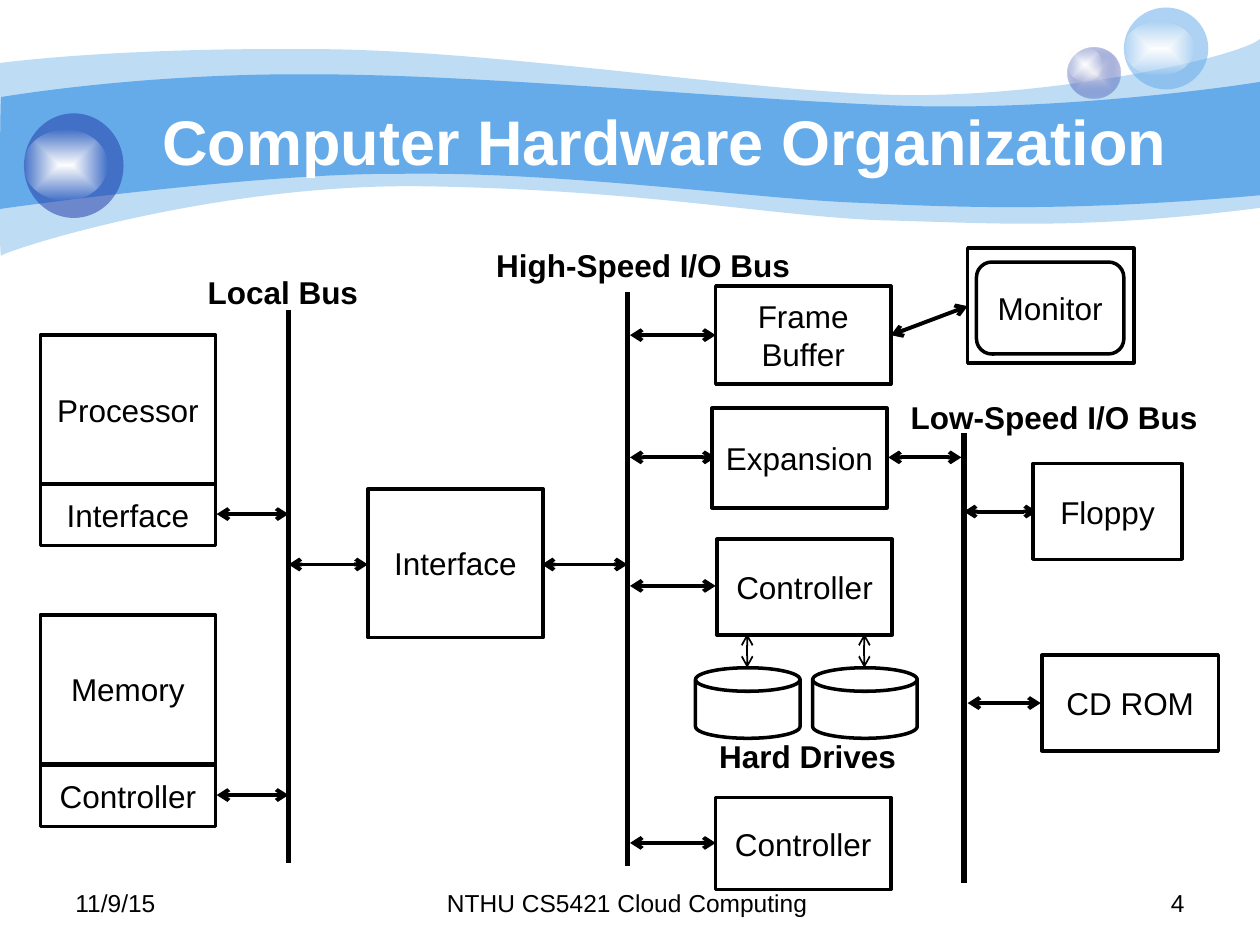
import dataclasses
from typing import Optional

import pptx
import pptx.dml.color
import pptx.enum.shapes
import pptx.enum.text
import pptx.oxml
import pptx.oxml.ns
import pptx.util
from pptx.util import Inches

SHAPE = pptx.enum.shapes.MSO_SHAPE
ALIGN = pptx.enum.text.PP_ALIGN
ANCHOR = pptx.enum.text.MSO_ANCHOR
qn = pptx.oxml.ns.qn
NS = pptx.oxml.ns.nsdecls("a")
BLACK, WHITE, SKY, NAVY = "000000", "FFFFFF", "65AAE9", "233DA9"
LOCAL_BUS_X, HIGH_BUS_X, LOW_BUS_X = 2.29, 4.98, 7.65
UNIT_W, UNIT_H = 1.39, 1.18


@dataclasses.dataclass
class Box:
    left: float
    top: float
    width: float
    height: float
    text: str = ""
    preset: int = SHAPE.RECTANGLE


@dataclasses.dataclass
class Link:
    x1: float
    y1: float
    x2: float
    y2: float
    weight: float = 2.25
    arrows: bool = True


@dataclasses.dataclass
class Label:
    left: float
    top: float
    width: float
    height: float
    text: str
    size: int = 18
    bold: bool = True
    color: str = BLACK
    align: int = ALIGN.LEFT
    anchor: int = ANCHOR.TOP


@dataclasses.dataclass
class Wave:
    """A start point followed by cubic curves; a two-number step is a straight line."""
    start: tuple
    steps: list
    opacity: int = 100


@dataclasses.dataclass
class Bubble:
    left: float
    top: float
    width: float
    height: float
    color: str
    opacity: int = 100
    center: Optional[str] = None


WAVES = [
    Wave((0, 0.5), [
        (0.24, 0.47, 1.07, 0.38, 2.47, 0.39), (3.86, 0.39, 5.75, 0.7, 6.99, 0.75),
        (8.22, 0.8, 9.8, 0.47, 10, 0.31), (10, 1.65),
        (8.58, 1.83, 7.87, 1.77, 7.05, 1.75), (6.22, 1.73, 5.15, 1.51, 3.43, 1.48),
        (1.72, 1.44, 0.04, 1.99, 0.01, 2.03), (-0.01, 2.08, 0, 0.75, 0, 0.5)], 41),
    Wave((0.01, 0.77), [
        (0.02, 0.77, 1.1, 0.58, 2.48, 0.59), (3.86, 0.59, 5.95, 0.8, 7.18, 0.84),
        (8.41, 0.88, 9.76, 0.69, 10, 0.65), (10, 1.55),
        (8.53, 1.68, 7.65, 1.65, 6.82, 1.61), (5.99, 1.58, 4.47, 1.36, 3.17, 1.38),
        (2.03, 1.37, -0.02, 1.66, -0.01, 1.66), (0, 1.66, 0, 0.77, 0.01, 0.77)]),
]
BUBBLES = [
    Bubble(8.47, 0.38, 0.42, 0.4, NAVY, 31, center="E1E2ED"),
    Bubble(8.47, 0.38, 0.28, 0.27, WHITE, 0, center=WHITE),
    Bubble(8.92, 0.06, 0.67, 0.65, SKY, 53),
    Bubble(8.92, 0.17, 0.56, 0.43, WHITE, 0, center=WHITE),
    Bubble(0.19, 0.9, 0.79, 0.83, NAVY, 53),
    Bubble(0.19, 1.03, 0.66, 0.56, WHITE, 0, center=WHITE),
]
BOXES = [
    Box(0.32, 2.66, UNIT_W, UNIT_H, "Processor"),
    Box(0.32, 3.84, UNIT_W, 0.49, "Interface"),
    Box(0.32, 4.88, UNIT_W, UNIT_H, "Memory"),
    Box(0.32, 6.07, UNIT_W, 0.49, "Controller"),
    Box(2.92, 3.88, UNIT_W, UNIT_H, "Interface"),
    Box(5.68, 6.33, UNIT_W, 0.73, "Controller"),
    Box(5.69, 4.28, UNIT_W, 0.76, "Controller"),
    Box(5.65, 3.24, UNIT_W, 0.79, "Expansion"),
    Box(5.68, 2.27, UNIT_W, 0.78, "Frame Buffer"),
    Box(5.52, 5.3, 0.83, 0.56, preset=SHAPE.FLOWCHART_MAGNETIC_DISK),
    Box(6.45, 5.3, 0.83, 0.56, preset=SHAPE.FLOWCHART_MAGNETIC_DISK),
    Box(7.68, 1.97, 1.32, 0.91),
    Box(7.75, 2.08, 1.17, 0.73, "Monitor", SHAPE.ROUNDED_RECTANGLE),
    Box(8.2, 3.68, 1.18, 0.76, "Floppy"),
    Box(8.27, 5.2, 1.4, 0.76, "CD ROM"),
]
BUSES = [Link(x, top, x, bottom, 3, False) for x, top, bottom in
         [(LOCAL_BUS_X, 2.46, 6.85), (HIGH_BUS_X, 2.32, 6.87), (LOW_BUS_X, 3.44, 7.01)]]
LINKS = [
    *[Link(1.72, y, LOCAL_BUS_X, y) for y in (4.08, 6.31)],
    Link(LOCAL_BUS_X, 4.48, 2.92, 4.48),
    Link(4.3, 4.48, HIGH_BUS_X, 4.48),
    *[Link(5, y, 5.68, y) for y in (2.66, 3.63, 4.65, 6.69)],
    *[Link(x, 5.03, x, 5.3, 1) for x in (5.93, 6.86)],
    Link(7.05, 3.63, 7.63, 3.63),
    Link(7.07, 2.66, 7.68, 2.43),
    Link(LOW_BUS_X, 4.06, 8.23, 4.06),
    Link(7.68, 5.58, 8.26, 5.58),
]
LABELS = [
    Label(1.06, 0.68, 8.43, 0.87, "Computer Hardware Organization", 36, True, WHITE,
          ALIGN.CENTER, ANCHOR.MIDDLE),
    Label(0.5, 7, 2.33, 0.35, "11/9/15", 14, False),
    Label(7.17, 7, 2.33, 0.35, "4", 14, False, align=ALIGN.RIGHT),
    Label(3.42, 7, 3.17, 0.35, "NTHU CS5421 Cloud Computing ", 14, False, align=ALIGN.CENTER),
    Label(5.61, 5.8, 1.91, 0.4, "Hard Drives"),
    Label(1.55, 2.12, 1.67, 0.36, "Local Bus"),
    Label(3.84, 1.9, 2.54, 0.36, "High-Speed I/O Bus"),
    Label(7.13, 3.11, 2.54, 0.4, "Low-Speed I/O Bus"),
]


def rgb(value: str) -> pptx.dml.color.RGBColor:
    return pptx.dml.color.RGBColor.from_string(value)


def fill_shape(shape, color: str, opacity: int = 100, center: Optional[str] = None) -> None:
    """Fill plainly, or from an opaque center colour outwards."""
    shape.shadow.inherit = False
    shape.fill.solid()
    shape.fill.fore_color.rgb = rgb(color)
    solid = shape._element.spPr.find(qn("a:solidFill"))
    if opacity < 100:
        solid[0].append(pptx.oxml.parse_xml(f'<a:alpha {NS} val="{opacity * 1000}"/>'))
    if center:
        gradient = pptx.oxml.parse_xml(
            f'<a:gradFill {NS} rotWithShape="1"><a:gsLst>'
            f'<a:gs pos="0"><a:srgbClr val="{center}"/></a:gs><a:gs pos="100000"/></a:gsLst>'
            '<a:path path="shape"><a:fillToRect l="50000" t="50000" r="50000" b="50000"/>'
            '</a:path></a:gradFill>')
        gradient[0][1].append(solid[0])
        solid.getparent().replace(solid, gradient)


def write(frame, text: str, size: int, bold: bool, color: str, align: int, anchor: int) -> None:
    frame.word_wrap = True
    frame.vertical_anchor = anchor
    paragraph = frame.paragraphs[0]
    paragraph.text = text
    paragraph.alignment = align
    paragraph.font.name = "Arial"
    paragraph.font.size = pptx.util.Pt(size)
    paragraph.font.bold = bold
    paragraph.font.color.rgb = rgb(color)


def draw_wave(slide, wave: Wave) -> None:
    """Outline the wave through its end points, then bend the curved segments."""
    builder = slide.shapes.build_freeform(*[Inches(v) for v in wave.start])
    builder.add_line_segments(
        [(Inches(step[-2]), Inches(step[-1])) for step in wave.steps], close=True)
    shape = builder.convert_to_shape()
    segments = list(shape._element.iter(qn("a:lnTo")))
    for segment, step in zip(segments, wave.steps):
        if len(step) == 2:
            continue
        points = "".join(
            f'<a:pt x="{Inches(x) - shape.left}" y="{Inches(y) - shape.top}"/>'
            for x, y in zip(step[::2], step[1::2]))
        curve = pptx.oxml.parse_xml(f'<a:cubicBezTo {NS}>{points}</a:cubicBezTo>')
        segment.getparent().replace(segment, curve)
    fill_shape(shape, SKY, wave.opacity)
    shape.line.fill.background()


def place(item) -> list:
    return [Inches(v) for v in (item.left, item.top, item.width, item.height)]


def draw_bubble(slide, bubble: Bubble) -> None:
    shape = slide.shapes.add_shape(SHAPE.OVAL, *place(bubble))
    fill_shape(shape, bubble.color, bubble.opacity, bubble.center)
    shape.line.fill.background()


def draw_box(slide, box: Box) -> None:
    shape = slide.shapes.add_shape(box.preset, *place(box))
    fill_shape(shape, WHITE)
    shape.line.color.rgb = rgb(BLACK)
    shape.line.width = pptx.util.Pt(2)
    if box.text:
        write(shape.text_frame, box.text, 18, False, BLACK, ALIGN.CENTER, ANCHOR.MIDDLE)


def draw_link(slide, link: Link) -> None:
    ends = [Inches(v) for v in (link.x1, link.y1, link.x2, link.y2)]
    connector = slide.shapes.add_connector(pptx.enum.shapes.MSO_CONNECTOR.STRAIGHT, *ends)
    connector.line.color.rgb = rgb(BLACK)
    connector.line.width = pptx.util.Pt(link.weight)
    if link.arrows:
        line = connector.line._get_or_add_ln()
        for end in ("a:headEnd", "a:tailEnd"):
            line.append(pptx.oxml.parse_xml(f'<{end} {NS} type="arrow"/>'))
    connector._element.spPr.append(pptx.oxml.parse_xml(f'<a:effectLst {NS}/>'))


def draw_label(slide, label: Label) -> None:
    frame = slide.shapes.add_textbox(*place(label)).text_frame
    write(frame, label.text, label.size, label.bold, label.color, label.align, label.anchor)


def main() -> None:
    deck = pptx.Presentation()
    deck.slide_width, deck.slide_height = Inches(10), Inches(7.5)
    slide = deck.slides.add_slide(deck.slide_layouts[6])
    for draw, items in [(draw_wave, WAVES), (draw_bubble, BUBBLES), (draw_link, BUSES + LINKS),
                        (draw_box, BOXES), (draw_label, LABELS)]:
        for item in items:
            draw(slide, item)
    deck.save("out.pptx")


if __name__ == "__main__":
    main()
